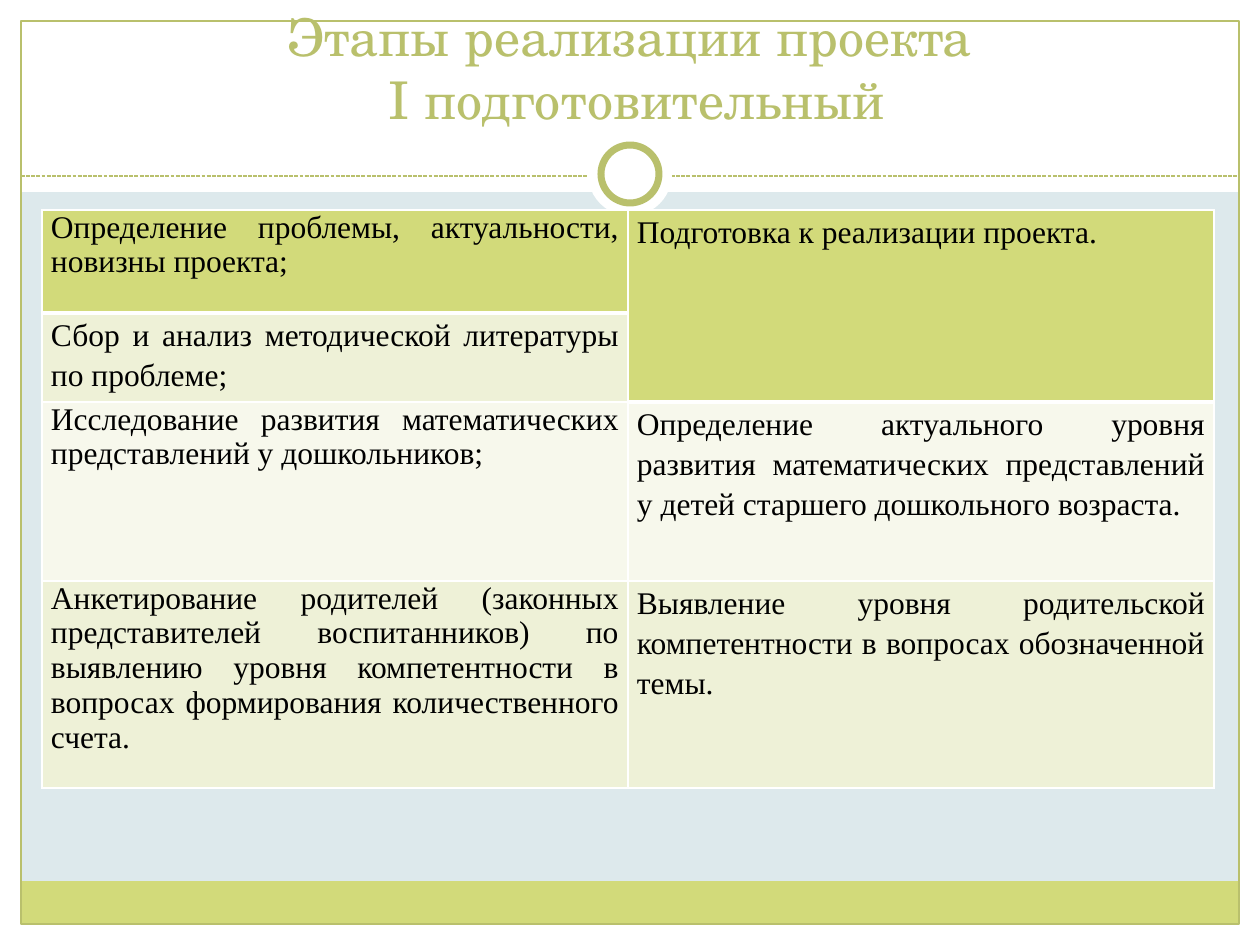
from lxml import etree
from pptx import Presentation
from pptx import util as u
from pptx.dml.color import RGBColor
from pptx.enum import dml, shapes, text
from pptx.oxml import ns

TITLE = "Этапы реализации проекта\v I подготовительный"

# Each cell: text, alignment, line spacing. None continues the cell above.
LEFT, JUSTIFY = text.PP_ALIGN.LEFT, text.PP_ALIGN.JUSTIFY
STAGES = [
    [("Определение проблемы, актуальности, новизны проекта;", JUSTIFY, 1.0),
     ("Подготовка к реализации проекта.", LEFT, 1.15)],
    [("Сбор и анализ методической литературы по проблеме;", JUSTIFY, 1.15), None],
    [("Исследование развития математических представлений у дошкольников;", JUSTIFY, 1.0),
     ("Определение актуального уровня развития математических представлений "
      "у детей старшего дошкольного возраста.", JUSTIFY, 1.15)],
    [("Анкетирование родителей (законных представителей воспитанников) по выявлению "
      "уровня компетентности в вопросах формирования количественного счета.", JUSTIFY, 1.0),
     ("Выявление уровня родительской компетентности в вопросах обозначенной темы.",
      JUSTIFY, 1.15)],
]
ROW_HEIGHTS = [103, 89, 179, 207]
COLUMN_WIDTH = 586

THEME = {
    "background": "DDE9EC", "white": "FFFFFF", "olive": "B9C06C", "lime": "D2DA7A",
    "ink": "000000", "rows": ["D2DA7A", "EEF1D7", "F7F8EC", "EEF1D7"],
    "title_font": "TeX Gyre Schola", "title_size": 29.7,
    "body_font": "Times New Roman", "body_size": 18,
}

WIDTH, HEIGHT, MARGIN = 1260, 945, 21
HEADER_HEIGHT, DIVIDER_Y, FOOTER_Y = 192, 176, 881
RING_CENTER = (630, 174)


def px(length):
    return u.Emu(length * 914400 // 126)


def color(name):
    return RGBColor.from_string(THEME.get(name, name))


def add_part(slide, kind, box, fill=None, line=None, line_width=0.75):
    part = slide.shapes.add_shape(kind, *map(px, box))
    part.shadow.inherit = False
    if fill:
        part.fill.solid()
        part.fill.fore_color.rgb = color(fill)
    else:
        part.fill.background()
    if line:
        part.line.color.rgb = color(line)
        part.line.width = u.Pt(line_width)
    else:
        part.line.fill.background()


def add_frame(slide):
    """White margins, footer band, outline, divider and ring."""
    rect, oval = shapes.MSO_SHAPE.RECTANGLE, shapes.MSO_SHAPE.OVAL
    inner_width, inner_height = WIDTH - 2 * MARGIN, HEIGHT - 2 * MARGIN
    for box in [(0, HEIGHT - MARGIN, WIDTH, MARGIN), (0, 0, WIDTH, HEADER_HEIGHT),
                (0, 0, MARGIN, HEIGHT), (WIDTH - MARGIN, 0, MARGIN, HEIGHT)]:
        add_part(slide, rect, box, "white")
    add_part(slide, rect, (MARGIN, FOOTER_Y, inner_width, HEIGHT - MARGIN - FOOTER_Y), "lime")
    add_part(slide, rect, (MARGIN, MARGIN, inner_width, inner_height), line="olive")

    divider = slide.shapes.add_connector(
        shapes.MSO_CONNECTOR.STRAIGHT, px(MARGIN), px(DIVIDER_Y),
        px(WIDTH - MARGIN), px(DIVIDER_Y))
    divider.line.color.rgb = color("olive")
    divider.line.width = u.Pt(0.75)
    divider.line.dash_style = dml.MSO_LINE.SQUARE_DOT
    etree.SubElement(divider._element.spPr, ns.qn("a:effectLst"))

    x, y = RING_CENTER
    for radius, line in [(42, None), (29, "olive")]:
        add_part(slide, oval, (x - radius, y - radius, 2 * radius, 2 * radius),
                 "white", line, 4)


def format_runs(paragraph, font, size, ink):
    for run in paragraph.runs:
        run.font.name = THEME[font]
        run.font.size = u.Pt(THEME[size])
        run.font.color.rgb = color(ink)


def place_title(slide):
    title = slide.shapes.title
    title.left, title.top, title.width, title.height = map(px, (42, 32, 1176, 104))
    title.text_frame.text = TITLE
    title.text_frame.vertical_anchor = text.MSO_ANCHOR.BOTTOM
    heading = title.text_frame.paragraphs[0]
    heading.alignment = text.PP_ALIGN.CENTER
    format_runs(heading, "title_font", "title_size", "olive")
    slide.shapes._spTree.append(title._element)  # in front of the header


def set_borders(cell, top, bottom):
    properties = cell._tc.get_or_add_tcPr()
    for index, (side, width) in enumerate([("L", 1), ("R", 1), ("T", top), ("B", bottom)]):
        border = etree.Element(ns.qn("a:ln" + side), w=str(u.Pt(width)))
        fill = etree.SubElement(border, ns.qn("a:solidFill"))
        etree.SubElement(fill, ns.qn("a:srgbClr"), val=THEME["white"])
        properties.insert(index, border)


def add_stages(slide):
    columns = len(STAGES[0])
    table = slide.shapes.add_table(
        len(STAGES), columns, px(42), px(210),
        px(columns * COLUMN_WIDTH), px(sum(ROW_HEIGHTS))).table
    table.first_row = table.horz_banding = False
    for column in table.columns:
        column.width = px(COLUMN_WIDTH)
    table.cell(0, 1).merge(table.cell(1, 1))
    header_end = [0, 1]  # last header row in each column

    for r, stage in enumerate(STAGES):
        table.rows[r].height = px(ROW_HEIGHTS[r])
        for c, content in enumerate(stage):
            cell = table.cell(r, c)
            cell.margin_left = cell.margin_right = px(9)
            cell.margin_top = cell.margin_bottom = 0
            cell.fill.solid()
            cell.fill.fore_color.rgb = color(THEME["rows"][r if content else 0])
            set_borders(cell, 3 if r == header_end[c] + 1 else 1,
                        3 if r == header_end[c] or (r, c) == (0, 1) else 1)
            if content:
                wording, alignment, spacing = content
                cell.text_frame.text = wording
                paragraph = cell.text_frame.paragraphs[0]
                paragraph.alignment = alignment
                paragraph.line_spacing = spacing
                format_runs(paragraph, "body_font", "body_size", "ink")


def main():
    deck = Presentation()
    deck.slide_width, deck.slide_height = px(WIDTH), px(HEIGHT)
    slide = deck.slides.add_slide(deck.slide_layouts[5])
    slide.background.fill.solid()
    slide.background.fill.fore_color.rgb = color("background")
    add_frame(slide)
    place_title(slide)
    add_stages(slide)
    deck.save("out.pptx")


if __name__ == "__main__":
    main()
